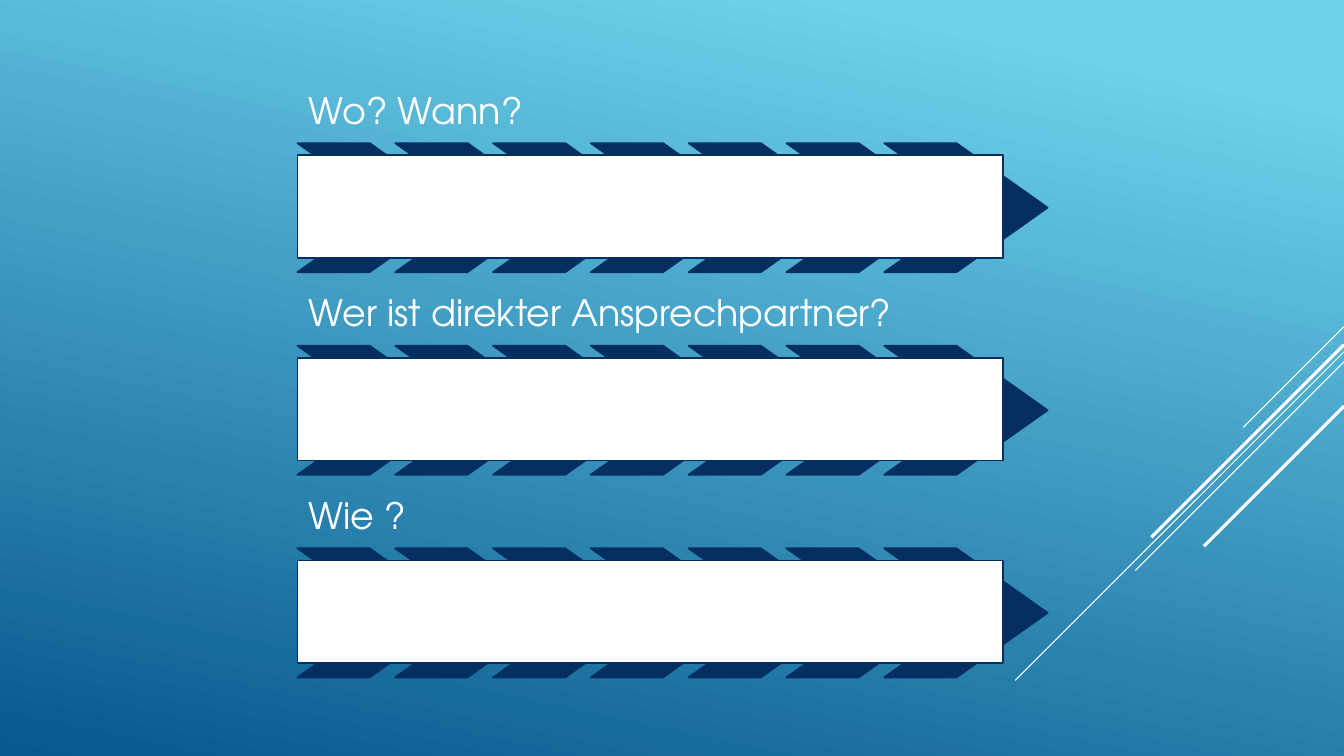
from dataclasses import dataclass

from lxml import etree
from pptx import Presentation
from pptx.dml.color import RGBColor
from pptx.enum.shapes import MSO_CONNECTOR, MSO_SHAPE
from pptx.enum.text import MSO_ANCHOR
from pptx.oxml.ns import qn
from pptx.shapes.autoshape import Shape
from pptx.slide import Slide
from pptx.util import Emu, Pt

CHEVRON = MSO_SHAPE.CHEVRON
RECTANGLE = MSO_SHAPE.RECTANGLE
STRAIGHT = MSO_CONNECTOR.STRAIGHT
BOTTOM = MSO_ANCHOR.BOTTOM

WHITE = RGBColor(0xFF, 0xFF, 0xFF)
NAVY = RGBColor(0x05, 0x2F, 0x61)
SKY = RGBColor(0x6E, 0xD2, 0xEB)
DEEP_BLUE = RGBColor(0x06, 0x58, 0x8E)

EMU_PER_PX = 9144  # 100 px to the inch
SLIDE_WIDTH, SLIDE_HEIGHT = 1333, 750

QUESTIONS = ("Wo? Wann?", "Wer ist direkter Ansprechpartner?", "Wie ?")
QUESTION_LEFT, QUESTION_TOP, QUESTION_STEP = 295, 79, 201
CHEVRON_COUNT, CHEVRON_STEP = 7, 97
CHEVRON_POINT = 0.706
LABEL_INSET = 11
LABEL_FONT = {"name": "TeX Gyre Adventor", "size": Pt(26)}


@dataclass(frozen=True)
class Box:
    left: int
    top: int
    width: int
    height: int

    def emu(self) -> tuple[Emu, Emu, Emu, Emu]:
        return px(self.left), px(self.top), px(self.width), px(self.height)


@dataclass(frozen=True)
class Streak:
    """Diagonal line running down and left from the right edge."""
    top: int
    run: int
    weight: float


STREAKS = (
    Streak(324, 100, 0.75),
    Streak(349, 326, 0.75),
    Streak(359, 207, 0.75),
    Streak(342, 191, 2.25),
    Streak(403, 139, 2.25),
)


def px(length: int) -> Emu:
    return Emu(length * EMU_PER_PX)


def paint_background(slide: Slide) -> None:
    fill = slide.background.fill
    fill.gradient()
    fill.gradient_angle = 258
    for stop, (position, color) in zip(fill.gradient_stops, ((0.1, SKY), (1, DEEP_BLUE))):
        stop.position = position
        stop.color.rgb = color


def add_streak(slide: Slide, streak: Streak) -> None:
    connector = slide.shapes.add_connector(
        STRAIGHT, px(SLIDE_WIDTH), px(streak.top),
        px(SLIDE_WIDTH - streak.run), px(streak.top + streak.run))
    connector.line.color.rgb = WHITE
    connector.line.width = Pt(streak.weight)
    etree.SubElement(connector.element.spPr, qn("a:effectLst"))


def add_outlined(slide: Slide, kind: MSO_SHAPE, box: Box, fill: RGBColor) -> Shape:
    shape = slide.shapes.add_shape(kind, *box.emu())
    shape.shadow.inherit = False
    shape.fill.solid()
    shape.fill.fore_color.rgb = fill
    shape.line.color.rgb = NAVY
    shape.line.width = Pt(1.25)
    return shape


def add_label(slide: Slide, text: str, box: Box) -> None:
    frame = slide.shapes.add_textbox(*box.emu()).text_frame
    inset = px(LABEL_INSET)
    frame_format = {
        "word_wrap": True, "vertical_anchor": BOTTOM,
        "margin_left": inset, "margin_right": inset,
        "margin_top": inset, "margin_bottom": inset,
    }
    for name, value in frame_format.items():
        setattr(frame, name, value)
    paragraph = frame.paragraphs[0]
    paragraph.line_spacing = 0.9
    run = paragraph.add_run()
    run.text = text
    for name, value in LABEL_FONT.items():
        setattr(run.font, name, value)
    run.font.color.rgb = WHITE


def add_question(slide: Slide, text: str, top: int) -> None:
    add_label(slide, text, Box(QUESTION_LEFT, top, 691, 63))
    # Row of chevrons, mostly covered by the answer panel
    for index in range(CHEVRON_COUNT):
        left = QUESTION_LEFT + index * CHEVRON_STEP
        chevron = add_outlined(slide, CHEVRON, Box(left, top + 63, 162, 128), NAVY)
        chevron.adjustments[0] = CHEVRON_POINT
    add_outlined(slide, RECTANGLE, Box(QUESTION_LEFT, top + 75, 700, 102), WHITE)


def main() -> None:
    presentation = Presentation()
    presentation.slide_width = px(SLIDE_WIDTH)
    presentation.slide_height = px(SLIDE_HEIGHT)
    slide = presentation.slides.add_slide(presentation.slide_layouts[6])

    # Backdrop
    paint_background(slide)
    for streak in STREAKS:
        add_streak(slide, streak)

    # Questions with answer panels
    for index, text in enumerate(QUESTIONS):
        add_question(slide, text, QUESTION_TOP + index * QUESTION_STEP)

    presentation.save("out.pptx")


if __name__ == "__main__":
    main()
